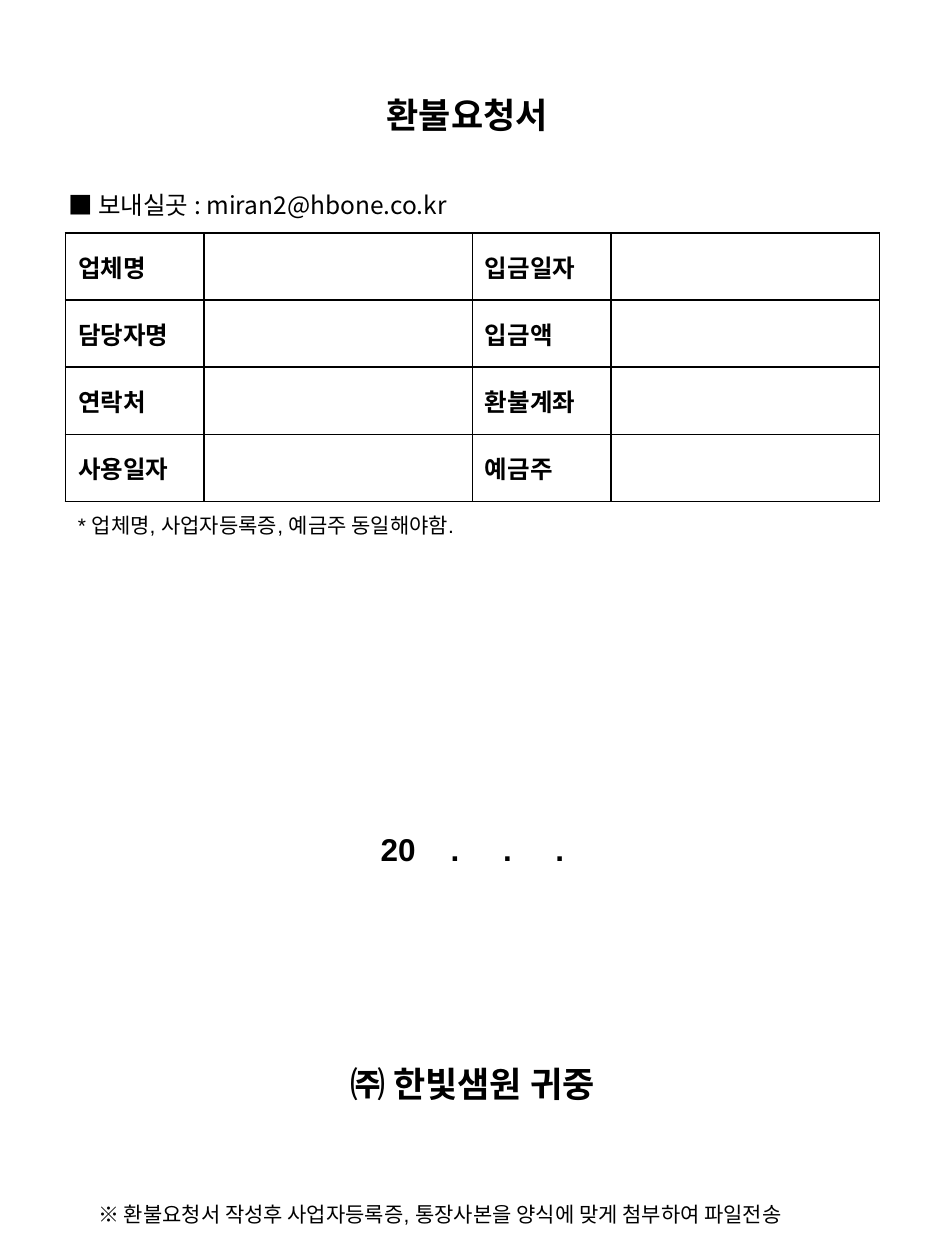
import pptx
import pptx.util
import pptx.dml.color
import pptx.enum.text
import pptx.oxml
import pptx.oxml.ns
import lxml.etree

Pt = pptx.util.Pt
ALIGN = pptx.enum.text.PP_ALIGN
ANCHOR = pptx.enum.text.MSO_ANCHOR
COLORS = {"ink": "000000", "paper": "FFFFFF"}
HANGUL = "Noto Sans CJK KR"
LATIN = "Arial"
FIELDS = [
    ("업체명", "입금일자"),
    ("담당자명", "입금액"),
    ("연락처", "환불계좌"),
    ("사용일자", "예금주"),
]


def add_run(paragraph, text, size, font=HANGUL, bold=False, spacing=0):
    """Add one formatted run, with optional letter spacing in points."""
    run = paragraph.add_run()
    run.text = text
    run.font.size = Pt(size)
    run.font.name = font
    run.font.bold = bold
    run.font.color.rgb = pptx.dml.color.RGBColor.from_string(COLORS["ink"])
    properties = run.font._element
    east_asian = lxml.etree.SubElement(properties, pptx.oxml.ns.qn("a:ea"))
    east_asian.set("typeface", HANGUL)
    if spacing:
        properties.set("spc", str(spacing * 100))


def place(shape, box):
    """Move a shape to a box of left, top, width and height."""
    shape.left, shape.top, shape.width, shape.height = map(Pt, box)


def fill_heading(placeholder, box, text, size, align, anchor, bold):
    """Place a heading placeholder and write its single line."""
    place(placeholder, box)
    frame = placeholder.text_frame
    frame.auto_size = pptx.enum.text.MSO_AUTO_SIZE.NONE
    frame.vertical_anchor = anchor
    frame.paragraphs[0].alignment = align
    add_run(frame.paragraphs[0], text, size, bold=bold)


def border_cell(cell):
    """Draw a thin line on all four sides of a cell."""
    properties = cell._tc.get_or_add_tcPr()
    for index, side in enumerate(("lnL", "lnR", "lnT", "lnB")):
        line = pptx.oxml.parse_xml(
            f'<a:{side} {pptx.oxml.ns.nsdecls("a")} w="{Pt(1)}"><a:solidFill>'
            f'<a:srgbClr val="{COLORS["ink"]}"/></a:solidFill></a:{side}>'
        )
        properties.insert(index, line)


def add_refund_table(slide, box):
    """Build the form grid of labels and blank answer cells."""
    left, top, width, height = box
    label_width = 79.3
    answer_width = width / 2 - label_width
    form = slide.shapes.add_table(len(FIELDS), 4, *map(Pt, box)).table
    form.first_row = form.horz_banding = False
    for index, column in enumerate(form.columns):
        column.width = Pt(answer_width if index % 2 else label_width)
    for row, labels in zip(form.rows, FIELDS):
        row.height = Pt(height / len(FIELDS))
        for index, cell in enumerate(row.cells):
            cell.fill.background()
            cell.vertical_anchor = ANCHOR.MIDDLE
            border_cell(cell)
            if index % 2 == 0:
                add_run(cell.text_frame.paragraphs[0], labels[index // 2], 14, bold=True)


def add_text_frame(slide, box):
    """Add a wrapping text box and return its frame."""
    frame = slide.shapes.add_textbox(*map(Pt, box)).text_frame
    frame.word_wrap = True
    return frame


def add_declaration(slide, box):
    """Write the remark, the date to fill in and the addressee."""
    frame = add_text_frame(slide, box)
    remark = frame.paragraphs[0]
    add_run(remark, "* 업체명, 사업자등록증, 예금주 동일해야함.", 12, LATIN)
    date = frame.add_paragraph()
    date.alignment = ALIGN.CENTER
    date.space_before = Pt(167)
    add_run(date, "20", 18, LATIN, bold=True)
    for gap in (15, 20, 20):
        add_run(date, " ", 18, LATIN, bold=True, spacing=gap)
        add_run(date, ".", 18, LATIN, bold=True)
    addressee = frame.add_paragraph()
    addressee.alignment = ALIGN.CENTER
    addressee.space_before = Pt(111)
    add_run(addressee, "㈜ 한빛샘원 귀중", 20, LATIN, bold=True)


def add_footnote(slide, box):
    """Write the instruction at the foot of the form."""
    instruction = add_text_frame(slide, box).paragraphs[0]
    add_run(
        instruction,
        "※ 환불요청서 작성후 사업자등록증, 통장사본을 양식에 맞게 첨부하여 파일전송",
        12,
        LATIN,
    )


def main():
    """Build the refund request form and save it."""
    deck = pptx.Presentation()
    deck.slide_width, deck.slide_height = Pt(540), Pt(720)
    slide = deck.slides.add_slide(deck.slide_layouts[0])
    paper = slide.background.fill
    paper.solid()
    paper.fore_color.rgb = pptx.dml.color.RGBColor.from_string(COLORS["paper"])
    title, recipient = slide.placeholders
    fill_heading(title, (37.4, 42.5, 459.4, 45.4), "환불요청서", 20,
                 ALIGN.CENTER, ANCHOR.MIDDLE, True)
    fill_heading(recipient, (31.7, 105.1, 419.8, 22.3), "■ 보내실곳 : miran2@hbone.co.kr", 14,
                 ALIGN.LEFT, ANCHOR.TOP, False)
    add_refund_table(slide, (37.4, 133.2, 465.1, 153.4))
    add_declaration(slide, (37.4, 289.4, 465.1, 353.5))
    add_footnote(slide, (49, 683.3, 447.8, 21.6))
    deck.save("out.pptx")


if __name__ == "__main__":
    main()
